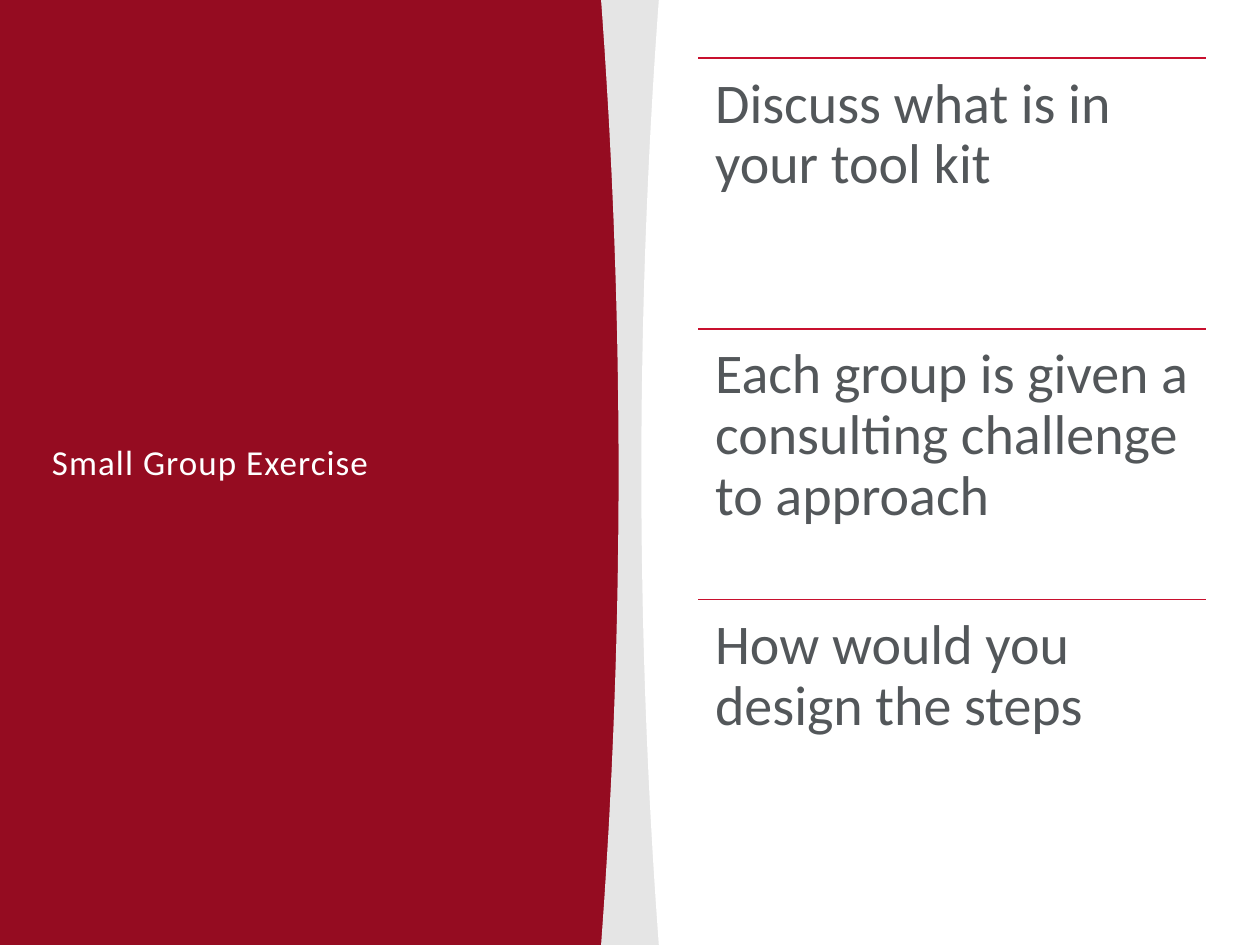
from lxml import etree
from pptx import Presentation
from pptx.dml.color import RGBColor
from pptx.enum.shapes import MSO_CONNECTOR
from pptx.enum.text import MSO_ANCHOR, MSO_AUTO_SIZE, PP_ALIGN
from pptx.oxml.ns import qn
from pptx.util import Pt

STRAIGHT = MSO_CONNECTOR.STRAIGHT
TOP, MIDDLE = MSO_ANCHOR.TOP, MSO_ANCHOR.MIDDLE
LEFT = PP_ALIGN.LEFT
NO_AUTOFIT = MSO_AUTO_SIZE.NONE

WIDTH, HEIGHT = 720, 540
COLORS = {"panel": "950C21", "band": "E5E5E5", "page": "FFFFFF",
          "rule": "C8102E", "body": "53575A", "title": "FFFFFF"}
STEPS = ["Discuss what is in your tool kit",
         "Each group is given a consulting challenge to approach",
         "How would you design the steps"]


class SlideBuilder:
    """Draws styled elements on one slide, with lengths in points."""

    font_name = "Calibri"

    def __init__(self, slide):
        self.slide = slide

    def color(self, key):
        return RGBColor.from_string(COLORS[key])

    def background(self, key):
        fill = self.slide.background.fill
        fill.solid()
        fill.fore_color.rgb = self.color(key)

    def curved_panel(self, middle_x, edge_x, key, segments=60):
        outline = [(WIDTH, 0)]
        for i in range(segments + 1):
            bend = (2 * i / segments - 1) ** 2
            outline.append((middle_x + (edge_x - middle_x) * bend, HEIGHT * i / segments))
        outline.append((WIDTH, HEIGHT))
        start, *rest = [(Pt(x), Pt(y)) for x, y in outline]
        builder = self.slide.shapes.build_freeform(*start)
        builder.add_line_segments(rest, close=True)
        panel = builder.convert_to_shape()
        panel.shadow.inherit = False
        panel.fill.solid()
        panel.fill.fore_color.rgb = self.color(key)
        panel.line.fill.background()

    def set_text(self, frame, text, size, key, anchor):
        frame.word_wrap = True
        frame.auto_size = NO_AUTOFIT
        frame.vertical_anchor = anchor
        paragraph = frame.paragraphs[0]
        paragraph.text = text
        paragraph.alignment = LEFT
        paragraph.line_spacing = 0.9
        paragraph.font.name = self.font_name
        paragraph.font.size = Pt(size)
        paragraph.font.color.rgb = self.color(key)
        return paragraph

    def title(self, text, left, top, width, height):
        title = self.slide.shapes.title
        title.left, title.top = Pt(left), Pt(top)
        title.width, title.height = Pt(width), Pt(height)
        paragraph = self.set_text(title.text_frame, text, 20, "title", MIDDLE)
        paragraph.runs[0]._r.get_or_add_rPr().set("spc", "60")

    def rule(self, left, top, width):
        rule = self.slide.shapes.add_connector(
            STRAIGHT, Pt(left), Pt(top), Pt(left + width), Pt(top))
        rule.line.color.rgb = self.color("rule")
        rule.line.width = Pt(1)
        etree.SubElement(rule._element.spPr, qn("a:effectLst"))

    def step(self, text, left, top, width, height, inset=9.6):
        self.rule(left, top, width)
        frame = self.slide.shapes.add_textbox(
            Pt(left), Pt(top), Pt(width), Pt(height)).text_frame
        frame.margin_left = frame.margin_right = Pt(inset)
        frame.margin_top = frame.margin_bottom = Pt(inset)
        self.set_text(frame, text, 32, "body", TOP)


def main():
    presentation = Presentation()
    presentation.slide_width, presentation.slide_height = Pt(WIDTH), Pt(HEIGHT)
    builder = SlideBuilder(presentation.slides.add_slide(presentation.slide_layouts[5]))
    top, width, height = 33.2, 290, 464
    builder.background("panel")
    builder.curved_panel(353.5, 343.5, "band")
    builder.curved_panel(366.5, 376.5, "page")
    builder.title("Small Group Exercise", 22.5, top, width, height)
    step_height = height / len(STEPS)
    for i, text in enumerate(STEPS):
        builder.step(text, 399, top + i * step_height, width, step_height)
    presentation.save("out.pptx")


if __name__ == "__main__":
    main()
